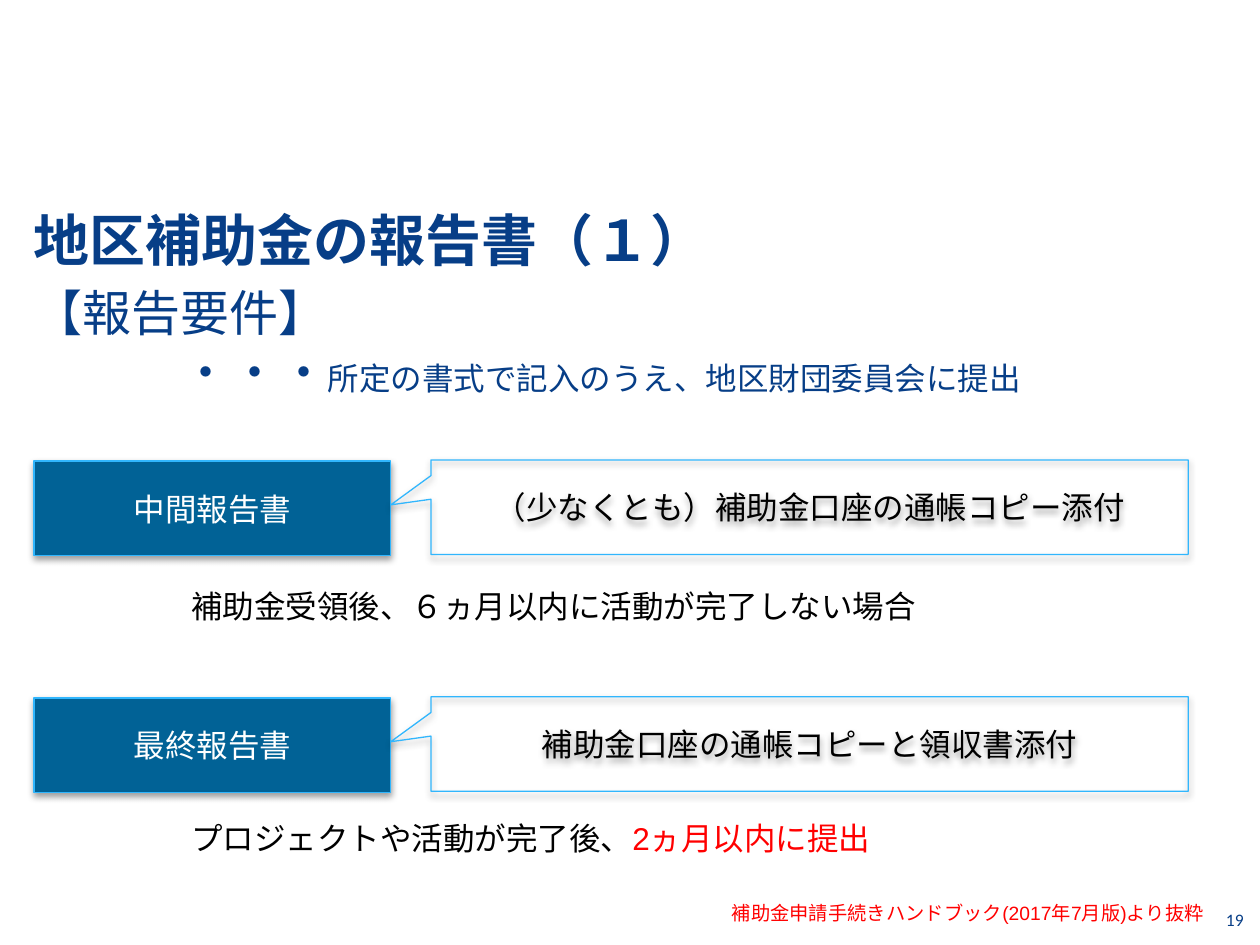
from lxml import etree
from pptx import Presentation, util as u
from pptx.dml.color import RGBColor
from pptx.enum import shapes, text
from pptx.oxml import ns

PX = 9144  # 100 px to the inch
NAVY = RGBColor(0x07, 0x3E, 0x87)
TEAL = RGBColor(0x01, 0x62, 0x96)
SKY = RGBColor(0x31, 0xB6, 0xFD)
RED = RGBColor(0xFF, 0x00, 0x00)
BLACK = RGBColor(0x00, 0x00, 0x00)
WHITE = RGBColor(0xFF, 0xFF, 0xFF)

prs = Presentation()
prs.slide_width, prs.slide_height = 1000 * PX, 750 * PX
s = prs.slides.add_slide(prs.slide_layouts[6])


def add_run(p, words, size, color, font="Arial", bold=False):
    r = p.add_run()
    r.text = words
    r.font.size = u.Pt(size)
    r.font.name = font
    r.font.bold = bold
    r.font.color.rgb = color


def add_box(kind, x, y, w, h, fill=None):
    """Outlined shape with a soft shadow below it; returns its paragraph."""
    sp = s.shapes.add_shape(kind, x * PX, y * PX, w * PX, h * PX)
    if fill is None:
        sp.fill.background()
    else:
        sp.fill.solid()
        sp.fill.fore_color.rgb = fill
    sp.line.color.rgb = SKY
    sp.line.width = u.Pt(0.75)
    sp.shadow.inherit = False
    effects = sp._element.spPr.find(ns.qn("a:effectLst"))
    shadow = etree.SubElement(effects, ns.qn("a:outerShdw"), blurRad=str(u.Pt(4)),
                              dist=str(u.Pt(2)), dir="5400000", rotWithShape="0")
    color = etree.SubElement(shadow, ns.qn("a:srgbClr"), val="000000")
    etree.SubElement(color, ns.qn("a:alpha"), val="38000")
    if kind == shapes.MSO_SHAPE.RECTANGULAR_CALLOUT:
        sp.adjustments[0], sp.adjustments[1] = -0.553, -0.024
    sp.text_frame.vertical_anchor = text.MSO_ANCHOR.MIDDLE
    p = sp.text_frame.paragraphs[0]
    p.alignment = text.PP_ALIGN.CENTER
    return p


# Slide number
tf = s.shapes.add_textbox(960 * PX, 710 * PX, 40 * PX, 40 * PX).text_frame
tf.margin_left = tf.margin_right = 0
tf.vertical_anchor = text.MSO_ANCHOR.MIDDLE
tf.word_wrap = True
p = tf.paragraphs[0]
p.alignment = text.PP_ALIGN.CENTER
add_run(p, "19", 10, NAVY, "Calibri")

# Source note
tf = s.shapes.add_textbox(571 * PX, 710 * PX, 451 * PX, 29 * PX).text_frame
tf.word_wrap = False
add_run(tf.paragraphs[0], "補助金申請手続きハンドブック(2017年7月版)より抜粋", 11, RED)

# Requirements: indent in px, space before in points, runs
body = [
    (0, 0, [("【報告要件】", 28, NAVY)]),
    (117, 0, [("・・・", 28, NAVY), ("所定の書式で記入のうえ、地区財団委員会に提出", 18, NAVY)]),
    (125, 107, [("補助金受領後、６ヵ月以内に活動が完了しない場合", 18, BLACK)]),
    (125, 111, [("プロジェクトや活動が完了後、", 18, BLACK), ("2ヵ月以内に提出", 18, RED)]),
]
tf = s.shapes.add_textbox(17 * PX, 219 * PX, 967 * PX, 471 * PX).text_frame
tf.word_wrap = True
for i, (indent, before, runs) in enumerate(body):
    p = tf.add_paragraph() if i else tf.paragraphs[0]
    p._p.get_or_add_pPr().set("marL", str(indent * PX))
    if before:
        p.space_before = u.Pt(before)
    for run in runs:
        add_run(p, *run)

# Title
tf = s.shapes.add_textbox(17 * PX, 158 * PX, 625 * PX, 64 * PX).text_frame
tf.word_wrap = True
add_run(tf.paragraphs[0], "地区補助金の報告書（１）", 32, NAVY, bold=True)

# Report names with their callouts
reports = [
    ("中間報告書", "（少なくとも）補助金口座の通帳コピー添付"),
    ("最終報告書", "補助金口座の通帳コピーと領収書添付"),
]
for i, (name, attachment) in enumerate(reports):
    y = 366 + 188 * i
    p = add_box(shapes.MSO_SHAPE.RECTANGLE, 27, y, 283, 75, TEAL)
    add_run(p, name, 18, WHITE)
    p = add_box(shapes.MSO_SHAPE.RECTANGULAR_CALLOUT, 342, y - 1, 601, 75)
    add_run(p, attachment, 18, BLACK, "Calibri")

prs.save("out.pptx")
